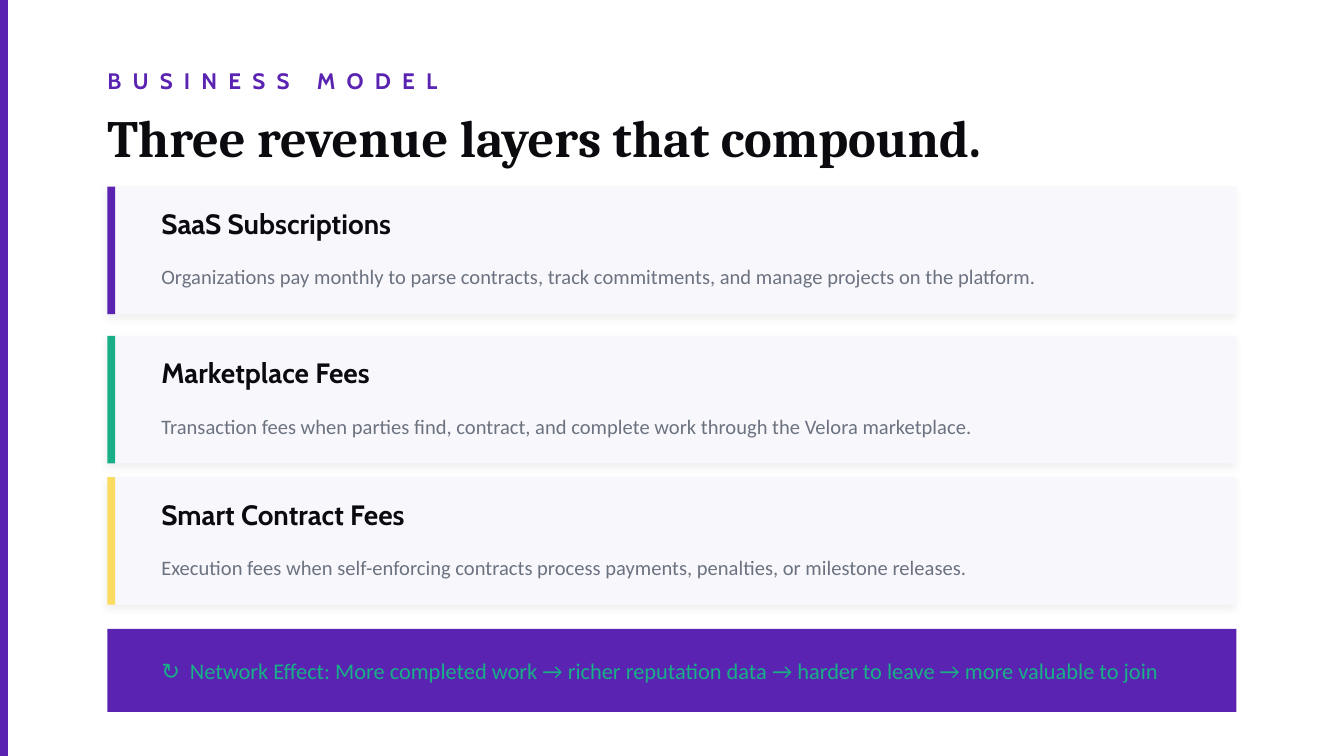
from dataclasses import dataclass

from lxml import etree
from pptx import Presentation
from pptx.dml.color import RGBColor
from pptx.enum import shapes, text
from pptx.oxml import ns
from pptx.util import Cm, Pt

PURPLE = RGBColor(0x5A, 0x23, 0xB1)
GREEN = RGBColor(0x19, 0xB0, 0x87)
YELLOW = RGBColor(0xFC, 0xDC, 0x60)
INK = RGBColor(0x0A, 0x0A, 0x0F)
GRAY = RGBColor(0x6B, 0x72, 0x80)
CARD_FILL = RGBColor(0xF8, 0xF7, 0xFC)

# Shared layout, in centimetres
SLIDE_HEIGHT = 14.29
MARGIN = 2.03
TEXT_LEFT = 3.05
CONTENT_WIDTH = 21.34
CARD_HEIGHT = 2.41
ACCENT_WIDTH = 0.15


@dataclass
class TextStyle:
    font: str
    size: float
    color: RGBColor
    bold: bool = False


@dataclass
class RevenueLayer:
    top: float
    accent: RGBColor
    name: str
    description: str


EYEBROW = TextStyle("Cabin", 12, PURPLE, True)
TITLE = TextStyle("Cambria", 28, INK, True)
CARD_NAME = TextStyle("Cabin", 15, INK, True)
CARD_TEXT = TextStyle("Calibri", 11, GRAY)
BANNER = TextStyle("Calibri", 12, GREEN)

LAYERS = [
    RevenueLayer(3.53, PURPLE, "SaaS Subscriptions",
                 "Organizations pay monthly to parse contracts, track commitments, "
                 "and manage projects on the platform."),
    RevenueLayer(6.35, GREEN, "Marketplace Fees",
                 "Transaction fees when parties find, contract, and complete work "
                 "through the Velora marketplace."),
    RevenueLayer(9.02, YELLOW, "Smart Contract Fees",
                 "Execution fees when self-enforcing contracts process payments, "
                 "penalties, or milestone releases."),
]


def write(shape, content: str, style: TextStyle):
    """Fill a shape with one left-aligned, vertically centred paragraph."""
    frame = shape.text_frame
    frame.text = content
    frame.word_wrap = True
    frame.auto_size = text.MSO_AUTO_SIZE.NONE
    frame.vertical_anchor = text.MSO_ANCHOR.MIDDLE
    frame.margin_left = frame.margin_right = 0
    frame.margin_top = frame.margin_bottom = 0
    paragraph = frame.paragraphs[0]
    paragraph.alignment = text.PP_ALIGN.LEFT
    font = paragraph.runs[0].font
    font.name = style.font
    font.size = Pt(style.size)
    font.bold = style.bold
    font.color.rgb = style.color
    return paragraph


def add_text(slide, left: float, top: float, width: float, height: float,
             content: str, style: TextStyle):
    box = slide.shapes.add_textbox(Cm(left), Cm(top), Cm(width), Cm(height))
    return write(box, content, style)


def add_rectangle(slide, left: float, top: float, width: float, height: float,
                  color: RGBColor):
    shape = slide.shapes.add_shape(shapes.MSO_SHAPE.RECTANGLE,
                                   Cm(left), Cm(top), Cm(width), Cm(height))
    shape.fill.solid()
    shape.fill.fore_color.rgb = color
    shape.line.fill.background()
    shape.shadow.inherit = False
    return shape


def add_soft_shadow(shape) -> None:
    effects = shape._element.spPr.find(ns.qn("a:effectLst"))
    shadow = etree.SubElement(effects, ns.qn("a:outerShdw"), blurRad=str(Pt(4)),
                              dist=str(Pt(2)), dir=str(135 * 60000),
                              algn="bl", rotWithShape="0")
    color = etree.SubElement(shadow, ns.qn("a:srgbClr"), val="000000")
    etree.SubElement(color, ns.qn("a:alpha"), val="6000")


def add_card(slide, layer: RevenueLayer) -> None:
    card = add_rectangle(slide, MARGIN, layer.top, CONTENT_WIDTH, CARD_HEIGHT, CARD_FILL)
    add_soft_shadow(card)
    add_rectangle(slide, MARGIN, layer.top, ACCENT_WIDTH, CARD_HEIGHT, layer.accent)
    add_text(slide, TEXT_LEFT, layer.top + 0.25, 6.35, 0.89, layer.name, CARD_NAME)
    add_text(slide, TEXT_LEFT, layer.top + 1.19, 19.05, 1.02, layer.description, CARD_TEXT)


def main() -> None:
    presentation = Presentation()
    presentation.slide_width = Cm(25.4)
    presentation.slide_height = Cm(SLIDE_HEIGHT)
    slide = presentation.slides.add_slide(presentation.slide_layouts[5])

    # Side stripe and heading
    add_rectangle(slide, 0, 0, ACCENT_WIDTH, SLIDE_HEIGHT, PURPLE)
    eyebrow = add_text(slide, MARGIN, 1.02, 12.7, 1.02, "BUSINESS MODEL", EYEBROW)
    eyebrow.runs[0].font._element.set("spc", "600")
    title = slide.shapes.title
    title.left, title.top = Cm(MARGIN), Cm(1.7)
    title.width, title.height = Cm(20.32), Cm(1.78)
    write(title, "Three revenue layers that compound.", TITLE)

    # Revenue cards
    for layer in LAYERS:
        add_card(slide, layer)

    # Network effect banner, with a tab stop after the symbol
    banner_top, banner_height = 11.89, 1.57
    add_rectangle(slide, MARGIN, banner_top, CONTENT_WIDTH, banner_height, PURPLE)
    paragraph = add_text(slide, TEXT_LEFT, banner_top, 19.81, banner_height,
                         "↻\tNetwork Effect: More completed work → richer reputation data "
                         "→ harder to leave → more valuable to join", BANNER)
    tabs = etree.SubElement(paragraph._p.get_or_add_pPr(), ns.qn("a:tabLst"))
    etree.SubElement(tabs, ns.qn("a:tab"), pos=str(Cm(0.54)), algn="l")

    presentation.save("out.pptx")


if __name__ == "__main__":
    main()
